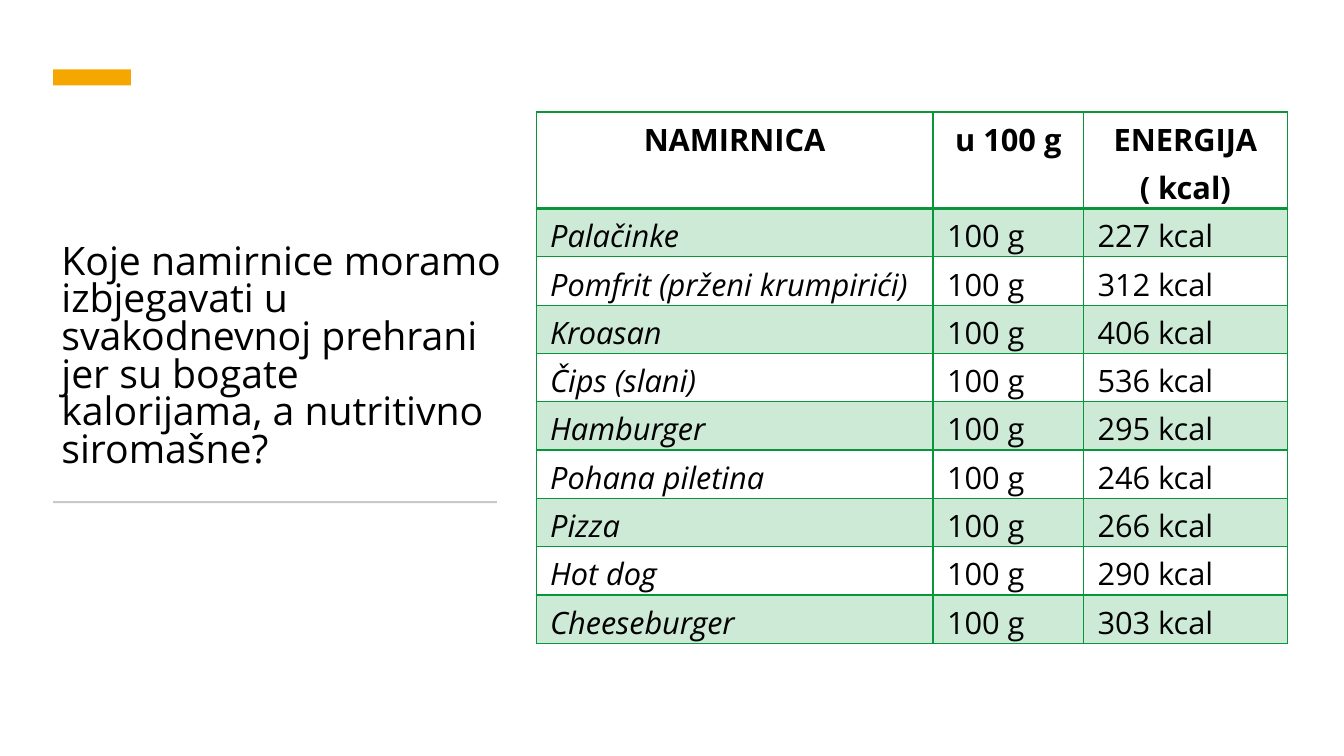
from lxml import etree
from pptx import Presentation
from pptx.dml.color import RGBColor
from pptx.enum import shapes, text
from pptx.oxml import ns
from pptx.util import Pt

FONT = "Open Sans"
BLACK = RGBColor(0x00, 0x00, 0x00)
ORANGE = RGBColor(0xF5, 0xA7, 0x00)
GREY = RGBColor(0xC9, 0xC9, 0xC9)
GREEN = RGBColor(0x09, 0x96, 0x3B)

QUESTION = ("Koje namirnice moramo izbjegavati u svakodnevnoj prehrani "
            "jer su bogate kalorijama, a nutritivno siromašne?")
HEADINGS = ["NAMIRNICA", "u 100 g", "ENERGIJA\n( kcal)"]
FOODS = [
    ("Palačinke", 227),
    ("Pomfrit (prženi krumpirići)", 312),
    ("Kroasan", 406),
    ("Čips (slani)", 536),
    ("Hamburger", 295),
    ("Pohana piletina", 246),
    ("Pizza", 266),
    ("Hot dog", 290),
    ("Cheeseburger", 303),
]
COLUMN_WIDTHS = [283.5, 107.5, 145.5]
HEADER_HEIGHT, ROW_HEIGHT = 69, 34.5


def add_bar(slide, left, top, width, height, color):
    """Draw a plain filled bar."""
    bar = slide.shapes.add_shape(shapes.MSO_SHAPE.RECTANGLE,
                                 Pt(left), Pt(top), Pt(width), Pt(height))
    bar.shadow.inherit = False
    bar.fill.solid()
    bar.fill.fore_color.rgb = color
    bar.line.fill.background()


def format_text(text_frame, size, spacing, alignment, bold=False, italic=False):
    """Give every paragraph and run of a text frame the same look."""
    for paragraph in text_frame.paragraphs:
        paragraph.line_spacing = spacing
        paragraph.alignment = alignment
        for run in paragraph.runs:
            run.font.name = FONT
            run.font.size = Pt(size)
            run.font.bold = bold
            run.font.italic = italic
            run.font.color.rgb = BLACK


def add_question(slide, left, top, width, height):
    """Place the question between the orange accent and the grey rule."""
    add_bar(slide, left, top, 55.5, 11.5, ORANGE)
    add_bar(slide, left, top + height - 1.5, width, 1.5, GREY)
    box = slide.shapes.add_textbox(Pt(left - 1.2), Pt(top + 69),
                                   Pt(width + 16), Pt(height - 88.5))
    frame = box.text_frame
    frame.word_wrap = True
    frame.vertical_anchor = text.MSO_ANCHOR.BOTTOM
    frame.text = QUESTION
    format_text(frame, 28, 0.8, text.PP_ALIGN.LEFT)


def fill_cell(cell, shaded):
    """Tint a shaded cell with translucent green, or leave it clear."""
    if not shaded:
        cell.fill.background()
        return
    cell.fill.solid()
    cell.fill.fore_color.rgb = GREEN
    color = cell._tc.tcPr.find(".//" + ns.qn("a:srgbClr"))
    etree.SubElement(color, ns.qn("a:alpha"), val="20000")


def border_cell(cell, bottom_width):
    """Outline a cell in green."""
    properties = cell._tc.get_or_add_tcPr()
    widths = {"a:lnL": 1, "a:lnR": 1, "a:lnT": 1, "a:lnB": bottom_width}
    for index, (tag, width) in enumerate(widths.items()):
        line = etree.Element(ns.qn(tag), w=str(Pt(width)))
        fill = etree.SubElement(line, ns.qn("a:solidFill"))
        etree.SubElement(fill, ns.qn("a:srgbClr"), val=str(GREEN))
        properties.insert(index, line)


def add_food_table(slide, left, top):
    """Place the table of foods and their energy values."""
    rows = [HEADINGS] + [[food, "100 g", f"{energy} kcal"] for food, energy in FOODS]
    height = HEADER_HEIGHT + ROW_HEIGHT * len(FOODS)
    table = slide.shapes.add_table(len(rows), len(HEADINGS), Pt(left), Pt(top),
                                   Pt(sum(COLUMN_WIDTHS)), Pt(height)).table
    for column, width in zip(table.columns, COLUMN_WIDTHS):
        column.width = Pt(width)
    for row_index, values in enumerate(rows):
        header = row_index == 0
        table.rows[row_index].height = Pt(HEADER_HEIGHT if header else ROW_HEIGHT)
        for column_index, value in enumerate(values):
            cell = table.cell(row_index, column_index)
            cell.margin_left = cell.margin_right = Pt(10)
            cell.margin_top = cell.margin_bottom = 0
            cell.text_frame.text = value
            alignment = text.PP_ALIGN.CENTER if header else text.PP_ALIGN.LEFT
            format_text(cell.text_frame, 22, 1.15, alignment, bold=header,
                        italic=not header and column_index == 0)
            fill_cell(cell, row_index % 2 == 1)
            border_cell(cell, 2 if header else 1)


def main():
    """Build and save the slide."""
    presentation = Presentation()
    presentation.slide_width, presentation.slide_height = Pt(960), Pt(540)
    slide = presentation.slides.add_slide(presentation.slide_layouts[6])
    add_question(slide, 38, 49.5, 317, 310)
    add_food_table(slide, 383, 80)
    presentation.save("out.pptx")


if __name__ == "__main__":
    main()
